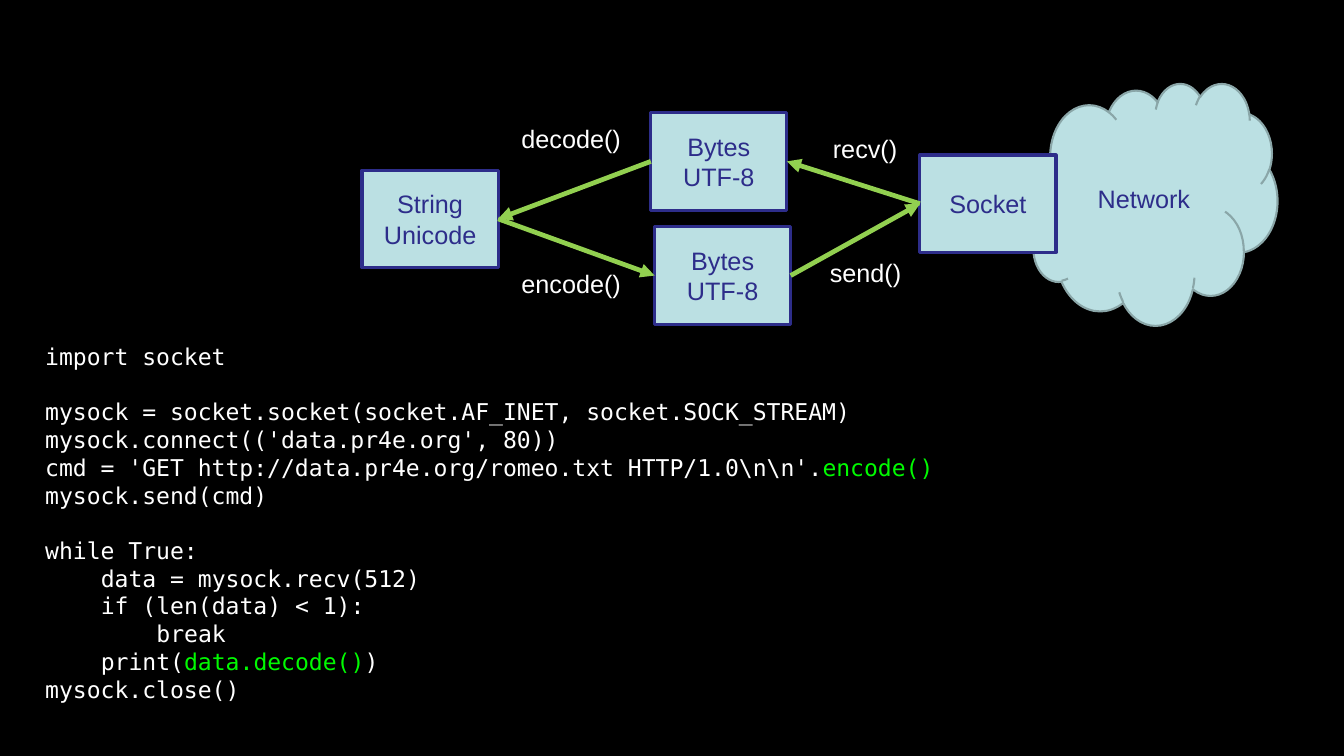
import pptx
from dataclasses import dataclass
from lxml import etree
from pptx.dml.color import RGBColor
from pptx.enum.shapes import MSO_CONNECTOR, MSO_SHAPE
from pptx.enum.text import MSO_ANCHOR, MSO_AUTO_SIZE, PP_ALIGN
from pptx.oxml.ns import qn
from pptx.util import Inches, Pt


@dataclass(frozen=True)
class Theme:
    back: RGBColor = RGBColor(0, 0, 0)
    text: RGBColor = RGBColor(255, 255, 255)
    mark: RGBColor = RGBColor(0x00, 0xFA, 0x00)
    fill: RGBColor = RGBColor(0xBB, 0xE0, 0xE3)
    edge: RGBColor = RGBColor(0x2D, 0x2D, 0x8A)
    rim: RGBColor = RGBColor(0x8A, 0xA6, 0xA8)
    arrow: RGBColor = RGBColor(0x92, 0xD0, 0x50)
    sans: str = "Arial"
    mono: str = "DejaVu Sans Mono"
    label: Pt = Pt(24)
    code: Pt = Pt(22)
    line: Pt = Pt(26.4)
    step: Pt = Pt(53)


THEME = Theme()
LEFT, RIGHT = 1, 3  # connection sites of a rectangle

# Each line: indent level, then plain and marked parts in turn.
CODE = [
    [
        (0, "import socket"),
    ],
    [
        (0, "mysock = socket.socket(socket.AF_INET, socket.SOCK_STREAM)"),
        (0, "mysock.connect(('data.pr4e.org', 80))"),
        (0, r"cmd = 'GET http://data.pr4e.org/romeo.txt HTTP/1.0\n\n'.",
         "encode()"),
        (0, "mysock.send(cmd)"),
    ],
    [
        (0, "while True:"),
        (1, "data = mysock.recv(512)"),
        (1, "if (len(data) < 1):"),
        (2, "break"),
        (1, "print(", "data.decode()", ")"),
        (0, "mysock.close()"),
    ],
]


def style(para, face, size, color):
    para.font.name = face
    para.font.size = size
    para.font.color.rgb = color


def add_node(slide, kind, box, words, edge, width):
    """Add a filled shape with one centred paragraph per word."""
    node = slide.shapes.add_shape(kind, *map(Inches, box))
    node.shadow.inherit = False
    node.fill.solid()
    node.fill.fore_color.rgb = THEME.fill
    node.line.color.rgb = edge
    node.line.width = Pt(width)
    frame = node.text_frame
    frame.vertical_anchor = MSO_ANCHOR.MIDDLE
    frame.text = "\n".join(words)
    for para in frame.paragraphs:
        para.alignment = PP_ALIGN.CENTER
        style(para, THEME.sans, THEME.label, THEME.edge)
    return node


def add_arrow(slide, start, end, side):
    """Join two nodes, leaving and arriving on facing sides."""
    arrow = slide.shapes.add_connector(MSO_CONNECTOR.STRAIGHT, 0, 0, 0, 0)
    arrow.begin_connect(start, side)
    arrow.end_connect(end, LEFT + RIGHT - side)
    arrow.line.color.rgb = THEME.arrow
    arrow.line.width = Pt(4.5)
    line = arrow.line._get_or_add_ln()
    etree.SubElement(line, qn("a:tailEnd"), type="triangle")
    etree.SubElement(arrow._element.spPr, qn("a:effectLst"))


def add_label(slide, box, text):
    label = slide.shapes.add_textbox(*map(Inches, box))
    frame = label.text_frame
    frame.word_wrap = False
    frame.auto_size = MSO_AUTO_SIZE.SHAPE_TO_FIT_TEXT
    frame.text = text
    style(frame.paragraphs[0], THEME.sans, THEME.label, THEME.text)


def draw_flow(slide, left, top):
    """Draw strings, bytes, socket and network from the given corner."""
    def place(x, y, wide, high):
        return left + x, top + y, wide, high

    def block(x, y, *words):
        box = place(x, y, 1.8, 1.29)
        return add_node(slide, MSO_SHAPE.RECTANGLE, box, words, THEME.edge, 3)

    add_node(slide, MSO_SHAPE.CLOUD, place(8.81, 0, 3.3, 3.2),
             ["Network"], THEME.rim, 2)
    socket = block(7.38, 0.95, "Socket")
    inward = block(3.82, 0.39, "Bytes", "UTF-8")
    string = block(0, 1.15, "String", "Unicode")
    outward = block(3.87, 1.9, "Bytes", "UTF-8")

    add_arrow(slide, string, outward, RIGHT)
    add_arrow(slide, socket, inward, LEFT)
    add_arrow(slide, outward, socket, RIGHT)
    add_arrow(slide, inward, string, LEFT)

    for x, y, wide, text in [
        (6.13, 0.62, 1.06, "recv()"),
        (2.01, 0.48, 1.53, "decode()"),
        (2.01, 2.4, 1.53, "encode()"),
        (6.09, 2.26, 1.16, "send()"),
    ]:
        add_label(slide, place(x, y, wide, 0.5), text)


def draw_code(slide, box):
    """List the code, with a one-line gap ahead of each later group."""
    frame = slide.shapes.add_textbox(*map(Inches, box)).text_frame
    frame.word_wrap = True
    para = None
    for group in CODE:
        for row, (level, *parts) in enumerate(group):
            gap = para is not None and row == 0
            para = frame.add_paragraph() if para else frame.paragraphs[0]
            style(para, THEME.mono, THEME.code, THEME.text)
            if gap:
                para.space_before = THEME.line
            if level:
                para._p.get_or_add_pPr().set("marL", str(level * THEME.step))
            for spot, text in enumerate(parts):
                run = para.add_run()
                run.text = text
                if spot % 2:
                    run.font.color.rgb = THEME.mark


def main():
    deck = pptx.Presentation()
    deck.slide_width, deck.slide_height = Inches(17.78), Inches(10)
    slide = deck.slides.add_slide(deck.slide_layouts[6])
    slide.background.fill.solid()
    slide.background.fill.fore_color.rgb = THEME.back
    draw_flow(slide, 4.79, 1.1)
    draw_code(slide, (0.5, 4.48, 12.44, 4.91))
    deck.save("out.pptx")


if __name__ == "__main__":
    main()
